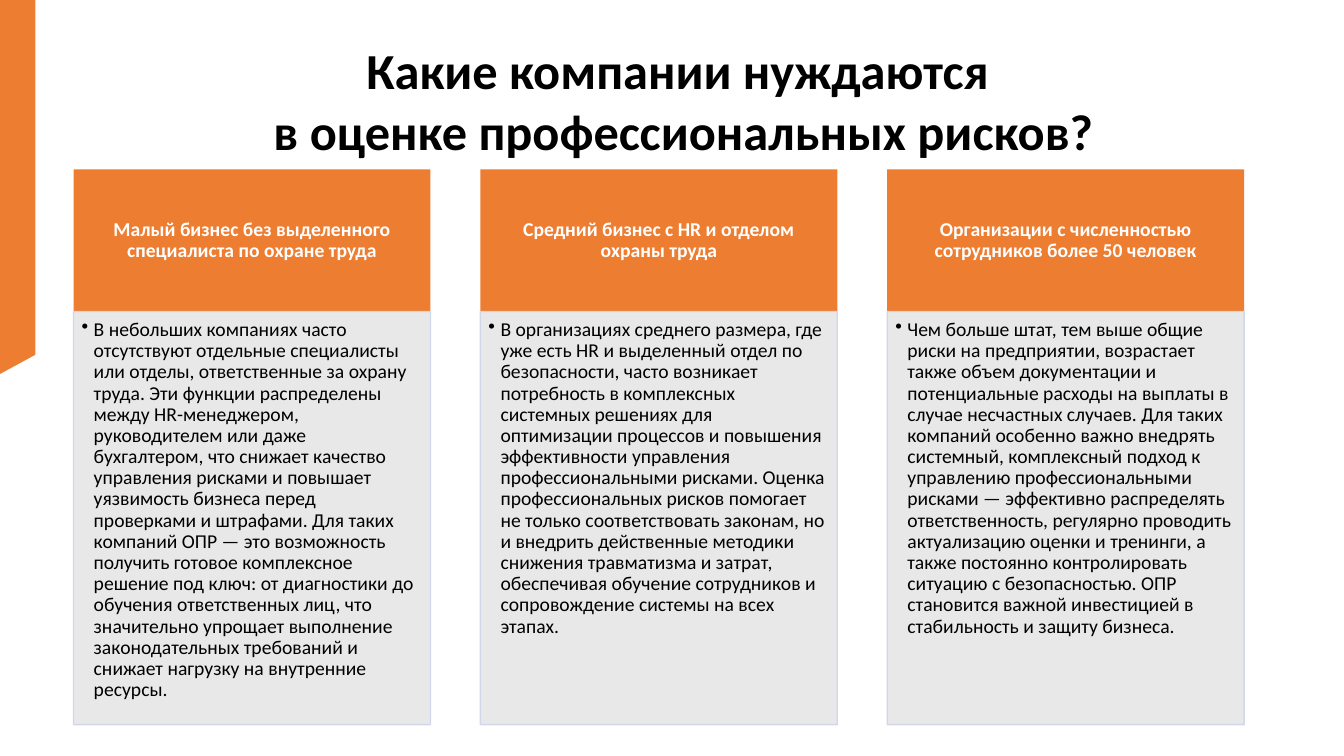
from dataclasses import dataclass

from lxml import etree
from pptx import Presentation
from pptx.dml.color import RGBColor
from pptx.enum.text import MSO_ANCHOR, MSO_AUTO_SIZE, PP_ALIGN
from pptx.oxml.ns import qn
from pptx.util import Inches, Pt

TOP, MIDDLE = MSO_ANCHOR.TOP, MSO_ANCHOR.MIDDLE
LEFT, CENTER = PP_ALIGN.LEFT, PP_ALIGN.CENTER
FIXED = MSO_AUTO_SIZE.NONE


@dataclass(frozen=True)
class Theme:
    font: str = "Calibri"
    accent: str = "ED7D31"
    panel: str = "E7E6E6"
    edge: str = "CFD5EA"
    ink: str = "000000"
    light: str = "FFFFFF"
    head: int = 36
    body: int = 14


TITLE = ["Какие компании нуждаются ", "в оценке профессиональных рисков?"]
CARDS = [
    ("Малый бизнес без выделенного специалиста по охране труда",
     "В небольших компаниях часто отсутствуют отдельные специалисты или отделы, "
     "ответственные за охрану труда. Эти функции распределены между HR-менеджером, "
     "руководителем или даже бухгалтером, что снижает качество управления рисками "
     "и повышает уязвимость бизнеса перед проверками и штрафами. Для таких компаний "
     "ОПР — это возможность получить готовое комплексное решение под ключ: от "
     "диагностики до обучения ответственных лиц, что значительно упрощает выполнение "
     "законодательных требований и снижает нагрузку на внутренние ресурсы."),
    ("Средний бизнес с HR и отделом охраны труда",
     "В организациях среднего размера, где уже есть HR и выделенный отдел по "
     "безопасности, часто возникает потребность в комплексных системных решениях "
     "для оптимизации процессов и повышения эффективности управления "
     "профессиональными рисками. Оценка профессиональных рисков помогает не только "
     "соответствовать законам, но и внедрить действенные методики снижения "
     "травматизма и затрат, обеспечивая обучение сотрудников и сопровождение "
     "системы на всех этапах."),
    ("Организации с численностью сотрудников более 50 человек",
     "Чем больше штат, тем выше общие риски на предприятии, возрастает также объем "
     "документации и потенциальные расходы на выплаты в случае несчастных случаев. "
     "Для таких компаний особенно важно внедрять системный, комплексный подход к "
     "управлению профессиональными рисками — эффективно распределять "
     "ответственность, регулярно проводить актуализацию оценки и тренинги, а также "
     "постоянно контролировать ситуацию с безопасностью. ОПР становится важной "
     "инвестицией в стабильность и защиту бизнеса."),
]


def write(frame, lines, font, size, color, bold=False, align=LEFT, anchor=TOP,
          inset=(0.1, 0.05, 0.1, 0.05), spacing=1.0, bullet=False):
    """Fill a text frame with one paragraph per line."""
    frame.word_wrap = True
    frame.auto_size = FIXED
    frame.vertical_anchor = anchor
    (frame.margin_left, frame.margin_top,
     frame.margin_right, frame.margin_bottom) = map(Inches, inset)
    for i, line in enumerate(lines):
        para = frame.add_paragraph() if i else frame.paragraphs[0]
        para.text = line
        if bullet:
            props = para._p.get_or_add_pPr()
            props.set("marL", str(Inches(0.12)))
            props.set("indent", str(-Inches(0.12)))
            etree.SubElement(props, qn("a:buChar")).set("char", "•")
        para.alignment = align
        para.line_spacing = spacing
        para.space_before = Pt(0)
        run = para.runs[0].font
        run.name, run.size, run.bold = font, Pt(size), bold
        run.color.rgb = RGBColor.from_string(color)


class Page:
    def __init__(self, slide, theme):
        self.slide, self.theme = slide, theme

    def paint(self, shape, fill, line=None, alpha=None):
        shape.shadow.inherit = False
        shape.fill.solid()
        shape.fill.fore_color.rgb = RGBColor.from_string(fill)
        if line:
            shape.line.color.rgb = RGBColor.from_string(line)
            shape.line.width = Pt(1)
        else:
            shape.line.fill.background()
        if alpha:
            for tone in shape._element.spPr.iter(qn("a:srgbClr")):
                etree.SubElement(tone, qn("a:alpha")).set("val", str(alpha * 1000))

    def title(self, lines, *box):
        shape = self.slide.shapes.title
        shape.left, shape.top, shape.width, shape.height = map(Inches, box)
        write(shape.text_frame, lines, self.theme.font, self.theme.head,
              self.theme.ink, bold=True, align=CENTER)

    def ribbon(self, points):
        start, *rest = [(Inches(x), Inches(y)) for x, y in points]
        form = self.slide.shapes.build_freeform(*start)
        form.add_line_segments(rest, close=True)
        self.paint(form.convert_to_shape(), self.theme.accent)

    def block(self, text, box, fill, color, line=None, alpha=None, **style):
        shape = self.slide.shapes.add_shape(1, *map(Inches, box))
        self.paint(shape, fill, line, alpha)
        write(shape.text_frame, [text], self.theme.font, self.theme.body, color,
              spacing=0.9, **style)

    def card(self, head, body, left):
        look, wide, top, mid = self.theme, 3.54, 1.68, 3.09
        self.block(head, (left, top, wide, mid - top), look.accent, look.light,
                   bold=True, align=CENTER, anchor=MIDDLE,
                   inset=(0.11, 0.06, 0.11, 0.06))
        self.block(body, (left, mid, wide, 4.1), look.panel, look.ink,
                   line=look.edge, alpha=90, bullet=True,
                   inset=(0.08, 0.08, 0.11, 0.12))


def main():
    deck = Presentation()
    deck.slide_width, deck.slide_height = Inches(13.33), Inches(7.5)
    page = Page(deck.slides.add_slide(deck.slide_layouts[5]), Theme())

    # Side ribbon and title
    page.ribbon([(0, 0), (0.35, 0), (0.35, 3.52), (0, 3.71)])
    page.title(TITLE, 1.23, 0.34, 11.1, 1.31)

    # Three equal columns
    for i, (head, body) in enumerate(CARDS):
        page.card(head, body, 0.73 + i * 4.035)

    deck.save("out.pptx")


if __name__ == "__main__":
    main()
